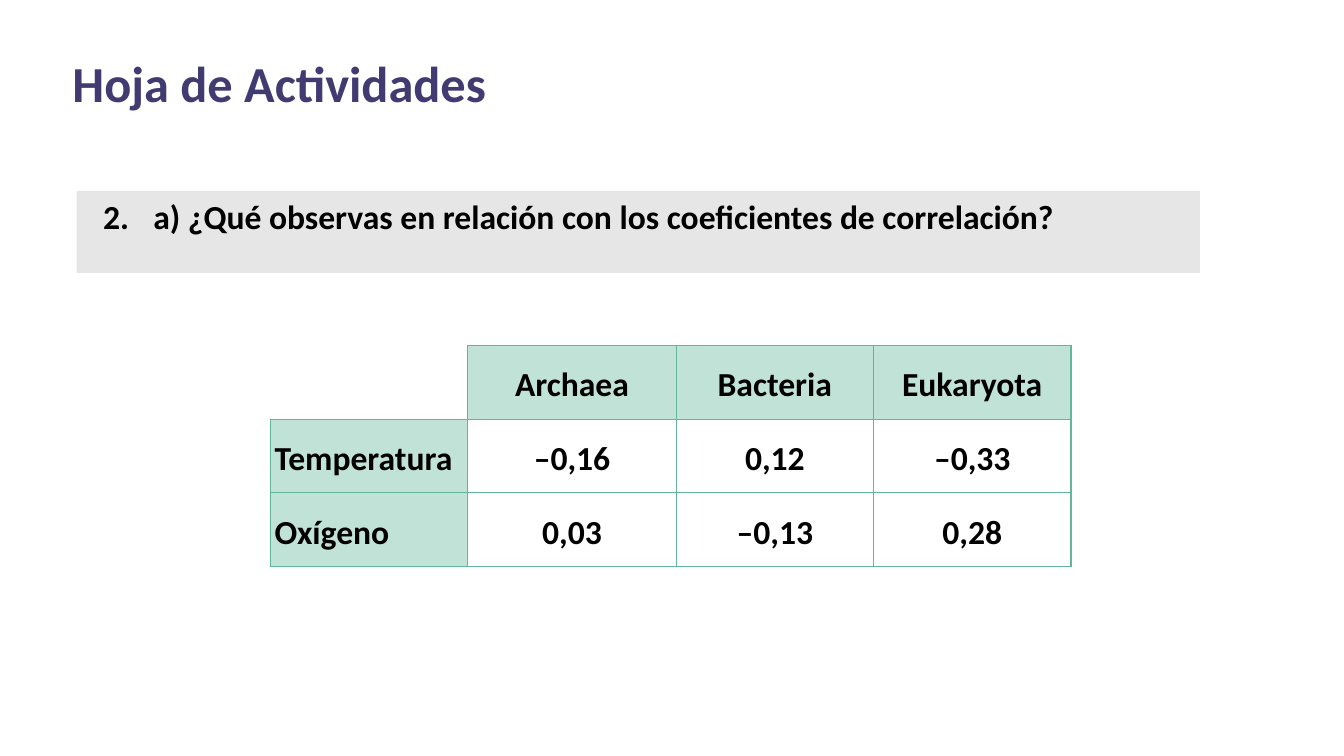
from dataclasses import dataclass

from lxml.etree import SubElement
from pptx import Presentation
from pptx.dml.color import RGBColor
from pptx.enum.shapes import MSO_SHAPE as Shape
from pptx.enum.text import MSO_ANCHOR as Anchor, PP_ALIGN as Align
from pptx.oxml.ns import qn
from pptx.util import Cm, Pt

PURPLE = RGBColor(0x42, 0x3B, 0x71)
BLACK = RGBColor(0x00, 0x00, 0x00)
WHITE = RGBColor(0xFF, 0xFF, 0xFF)
GREY = RGBColor(0xE7, 0xE6, 0xE6)
MINT = RGBColor(0xC0, 0xE2, 0xD7)
GREEN = RGBColor(0x62, 0xB7, 0x99)
FONT = "Calibri"
ROW_HEIGHT = Cm(1.38)
COLUMN_WIDTHS = [Cm(3.73), Cm(3.94), Cm(3.73), Cm(3.73)]
DOMAINS = ["Archaea", "Bacteria", "Eukaryota"]


@dataclass
class Correlation:
    factor: str
    values: list[str]


CORRELATIONS = [
    Correlation("Temperatura", ["–0,16", "0,12", "–0,33"]),
    Correlation("Oxígeno", ["0,03", "–0,13", "0,28"]),
]


def format_paragraph(para, size: float, color: RGBColor, align: Align) -> None:
    para.alignment = align
    para.font.name = FONT
    para.font.size = Pt(size)
    para.font.bold = True
    para.font.color.rgb = color


def set_frame(frame) -> None:
    frame.word_wrap = True
    frame.vertical_anchor = Anchor.TOP
    frame.margin_left = frame.margin_right = Cm(0.18)
    frame.margin_top = frame.margin_bottom = Cm(0.1)


def add_title(page, text: str) -> None:
    title = page.shapes.title
    title.left, title.top, title.width, title.height = Cm(1.19), Cm(0.89), Cm(19.99), Cm(1.35)
    set_frame(title.text_frame)
    title.text_frame.text = text
    format_paragraph(title.text_frame.paragraphs[0], 27, PURPLE, Align.LEFT)


def number_paragraph(para, start: int) -> None:
    properties = para._p.get_or_add_pPr()
    properties.set("marL", str(Cm(1.27)))
    properties.set("indent", str(-Cm(0.95)))
    color = SubElement(properties, qn("a:buClr"))
    SubElement(color, qn("a:srgbClr"), val=str(BLACK))
    SubElement(properties, qn("a:buFont"), typeface="+mj-lt")
    SubElement(properties, qn("a:buAutoNum"), type="arabicPeriod", startAt=str(start))


def add_question(page, number: int, text: str) -> None:
    box = page.shapes.add_shape(Shape.RECTANGLE, Cm(1.45), Cm(3.61), Cm(21.23), Cm(1.55))
    box.shadow.inherit = False
    box.fill.solid()
    box.fill.fore_color.rgb = GREY
    box.line.fill.background()
    set_frame(box.text_frame)
    para = box.text_frame.paragraphs[0]
    para.text = text
    number_paragraph(para, number)
    para.space_after = Pt(10)
    format_paragraph(para, 18, BLACK, Align.JUSTIFY)


def set_borders(cell, left_top: RGBColor, right_bottom: RGBColor) -> None:
    properties = cell._tc.get_or_add_tcPr()
    sides = {"lnL": left_top, "lnR": right_bottom, "lnT": left_top, "lnB": right_bottom}
    for side, color in sides.items():
        line = SubElement(properties, qn(f"a:{side}"), w=str(Pt(0.75)))
        fill = SubElement(line, qn("a:solidFill"))
        SubElement(fill, qn("a:srgbClr"), val=str(color))


def fill_cell(cell, text: str, is_header: bool, align: Align) -> None:
    set_borders(cell, GREEN if text else WHITE, GREEN)
    if is_header and text:
        cell.fill.solid()
        cell.fill.fore_color.rgb = MINT
    else:
        cell.fill.background()
    cell.vertical_anchor = Anchor.BOTTOM
    cell.margin_left = cell.margin_right = Cm(0.08)
    cell.margin_top = cell.margin_bottom = Cm(0.25)
    para = cell.text_frame.paragraphs[0]
    if text:
        para.text = text
    para.line_spacing = 1.15
    format_paragraph(para, 18, BLACK, align)


def add_correlations(page) -> None:
    rows = [["", *DOMAINS]] + [[item.factor, *item.values] for item in CORRELATIONS]
    table = page.shapes.add_table(
        len(rows), len(COLUMN_WIDTHS), Cm(5.11), Cm(6.53),
        sum(COLUMN_WIDTHS), ROW_HEIGHT * len(rows),
    ).table
    table.first_row = table.horz_banding = False
    for column, width in zip(table.columns, COLUMN_WIDTHS):
        column.width = width
    for row_index, texts in enumerate(rows):
        table.rows[row_index].height = ROW_HEIGHT
        for column_index, text in enumerate(texts):
            is_header = row_index == 0 or column_index == 0
            align = Align.CENTER if column_index else Align.LEFT
            fill_cell(table.cell(row_index, column_index), text, is_header, align)


def main() -> None:
    deck = Presentation()
    deck.slide_width, deck.slide_height = Cm(25.4), Cm(14.29)
    page = deck.slides.add_slide(deck.slide_layouts[5])
    add_title(page, "Hoja de Actividades")
    add_question(page, 2, "a) ¿Qué observas en relación con los coeficientes de correlación?")
    add_correlations(page)
    deck.save("out.pptx")


if __name__ == "__main__":
    main()
